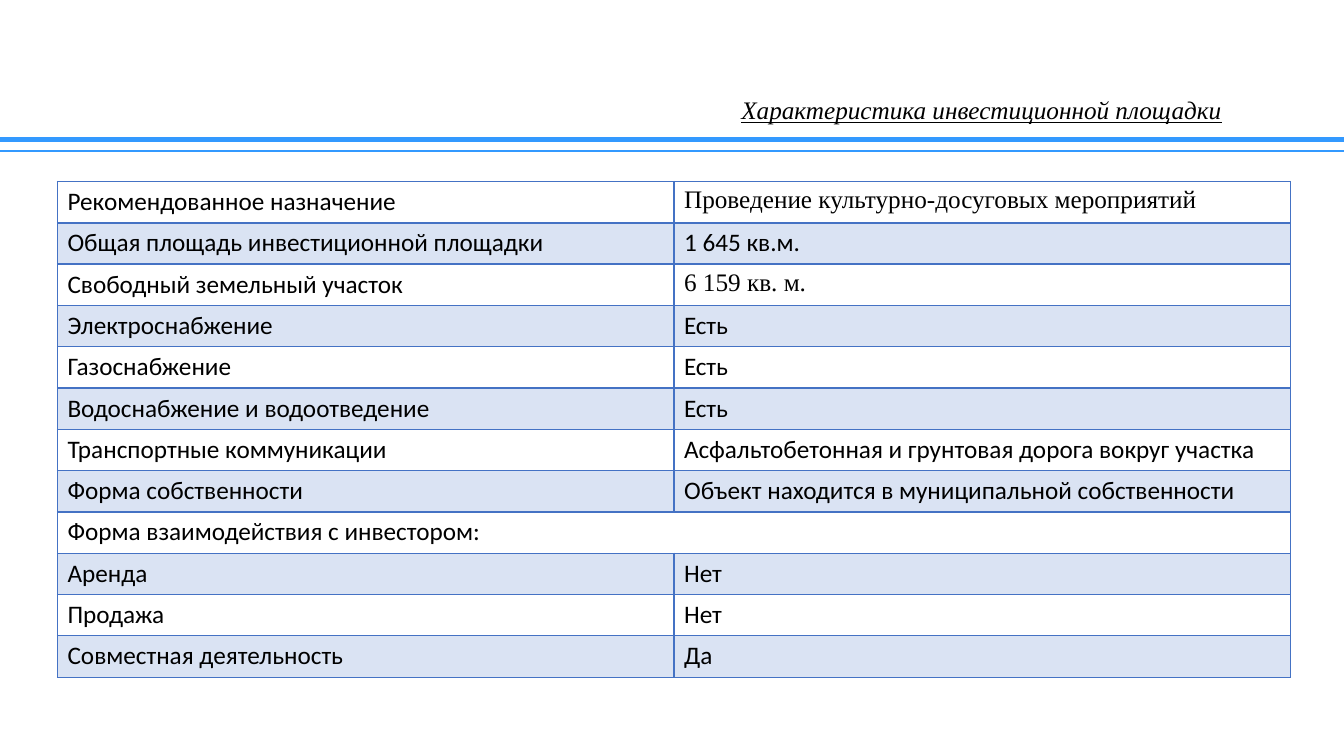
"""Build the slide that describes an investment site."""
from dataclasses import dataclass

import pptx
import pptx.dml.color
import pptx.enum.text
import pptx.oxml
import pptx.oxml.ns
import pptx.util
from pptx.util import Inches


@dataclass(frozen=True)
class Theme:
    ink: str = "000000"
    rule: str = "3399FF"
    edge: str = "4472C4"
    band: str = "DAE3F3"
    sans: str = "Calibri"
    serif: str = "Times New Roman"
    size: int = 18


THEME = Theme()
RULES = [(1.38, 3.5), (1.5, 1.5)]
ROWS = [
    ("Рекомендованное назначение", "Проведение культурно-досуговых мероприятий"),
    ("Общая площадь инвестиционной площадки", "1 645 кв.м."),
    ("Свободный земельный участок", "6 159 кв. м."),
    ("Электроснабжение", "Есть"),
    ("Газоснабжение", "Есть"),
    ("Водоснабжение и водоотведение", "Есть"),
    ("Транспортные коммуникации", "Асфальтобетонная и грунтовая дорога вокруг участка"),
    ("Форма собственности", "Объект находится в муниципальной собственности"),
    ("Форма взаимодействия с инвестором:", None),
    ("Аренда", "Нет"),
    ("Продажа", "Нет"),
    ("Совместная деятельность", "Да"),
]
SERIF_ROWS = {0, 2}


def color(code):
    return pptx.dml.color.RGBColor.from_string(code)


def write(frame, text, font=THEME.sans, align=None, space=None, italic=False, under=False):
    para = frame.paragraphs[0]
    para.alignment = align
    para.line_spacing = space
    run = para.add_run()
    run.text = text
    run.font.name = font
    run.font.size = pptx.util.Pt(THEME.size)
    run.font.color.rgb = color(THEME.ink)
    run.font.bold = False
    run.font.italic = italic
    run.font.underline = under


def add_rule(slide, top, width):
    line = slide.shapes.add_connector(
        pptx.enum.shapes.MSO_CONNECTOR.STRAIGHT,
        Inches(0), Inches(top), Inches(13.33), Inches(top))
    line.line.color.rgb = color(THEME.rule)
    line.line.width = pptx.util.Pt(width)
    props = line._element.spPr
    props.append(pptx.oxml.parse_xml(
        f'<a:effectLst {pptx.oxml.ns.nsdecls("a")}/>'))


def set_title(slide, text):
    title = slide.shapes.title
    title.left, title.top = Inches(6.67), Inches(0.97)
    title.width, title.height = Inches(6.13), Inches(0.27)
    frame = title.text_frame
    frame.word_wrap = True
    frame.auto_size = pptx.enum.text.MSO_AUTO_SIZE.NONE
    frame.vertical_anchor = pptx.enum.text.MSO_ANCHOR.MIDDLE
    write(frame, text, font=THEME.serif, align=pptx.enum.text.PP_ALIGN.CENTER,
          space=0.9, italic=True, under=True)


def set_edges(cell, widths):
    """Put left, right, top and bottom borders ahead of the cell fill."""
    props = cell._tc.get_or_add_tcPr()
    for place, (side, width) in enumerate(zip("LRTB", widths)):
        props.insert(place, pptx.oxml.parse_xml(
            f'<a:ln{side} {pptx.oxml.ns.nsdecls("a")} w="{pptx.util.Pt(width)}">'
            f'<a:solidFill><a:srgbClr val="{THEME.edge}"/></a:solidFill></a:ln{side}>'))


def add_table(slide, rows):
    table = slide.shapes.add_table(
        len(rows), 2, Inches(0.57), Inches(1.8),
        Inches(12.23), Inches(0.41 * len(rows))).table
    table.first_row = False
    table.horz_banding = False
    for row, texts in enumerate(rows):
        table.rows[row].height = Inches(0.41)
        for col, text in enumerate(texts):
            cell = table.cell(row, col)
            if row % 2:
                cell.fill.solid()
                cell.fill.fore_color.rgb = color(THEME.band)
            else:
                cell.fill.background()
            set_edges(cell, (1, 1, 2 if row == 1 else 1, 2 if row == 0 else 1))
            if text is None:
                table.cell(row, 0).merge(cell)
            else:
                serif = col == 1 and row in SERIF_ROWS
                write(cell.text_frame, text, font=THEME.serif if serif else THEME.sans)


def main():
    deck = pptx.Presentation()
    deck.slide_width, deck.slide_height = Inches(13.33), Inches(7.5)
    slide = deck.slides.add_slide(deck.slide_layouts.get_by_name("Title Only"))
    for top, width in RULES:
        add_rule(slide, top, width)
    set_title(slide, "Характеристика инвестиционной площадки")
    add_table(slide, ROWS)
    deck.save("out.pptx")


if __name__ == "__main__":
    main()
